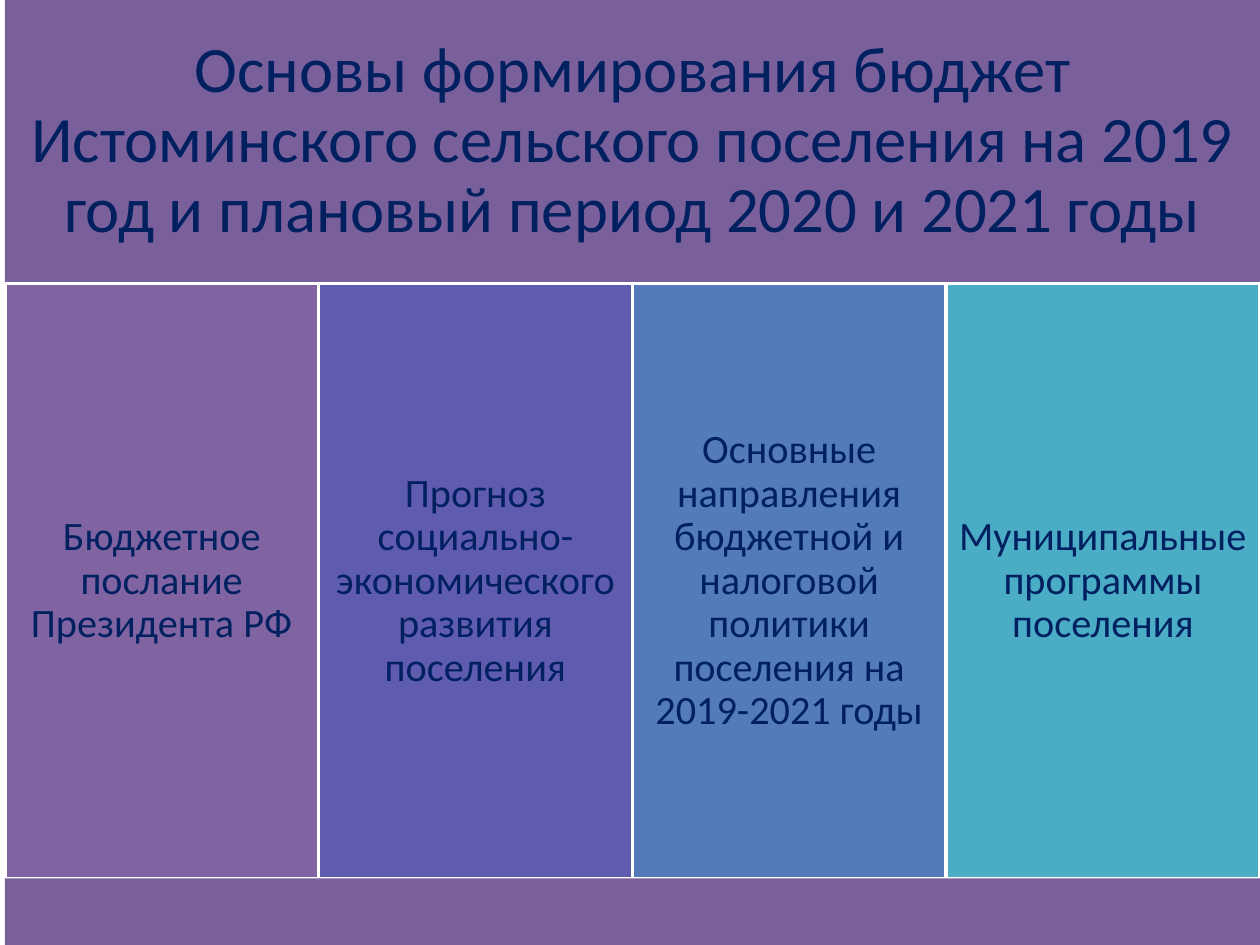
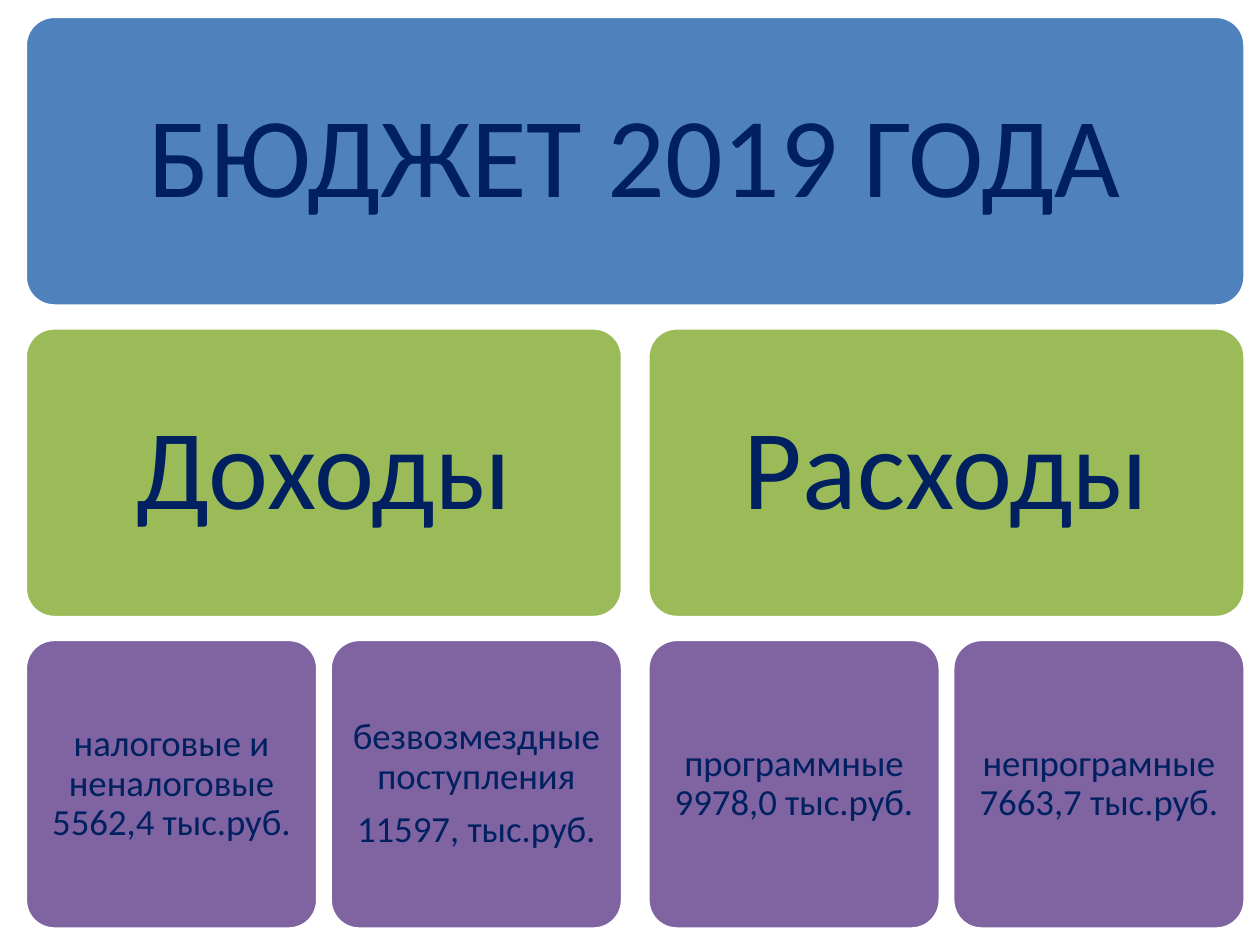
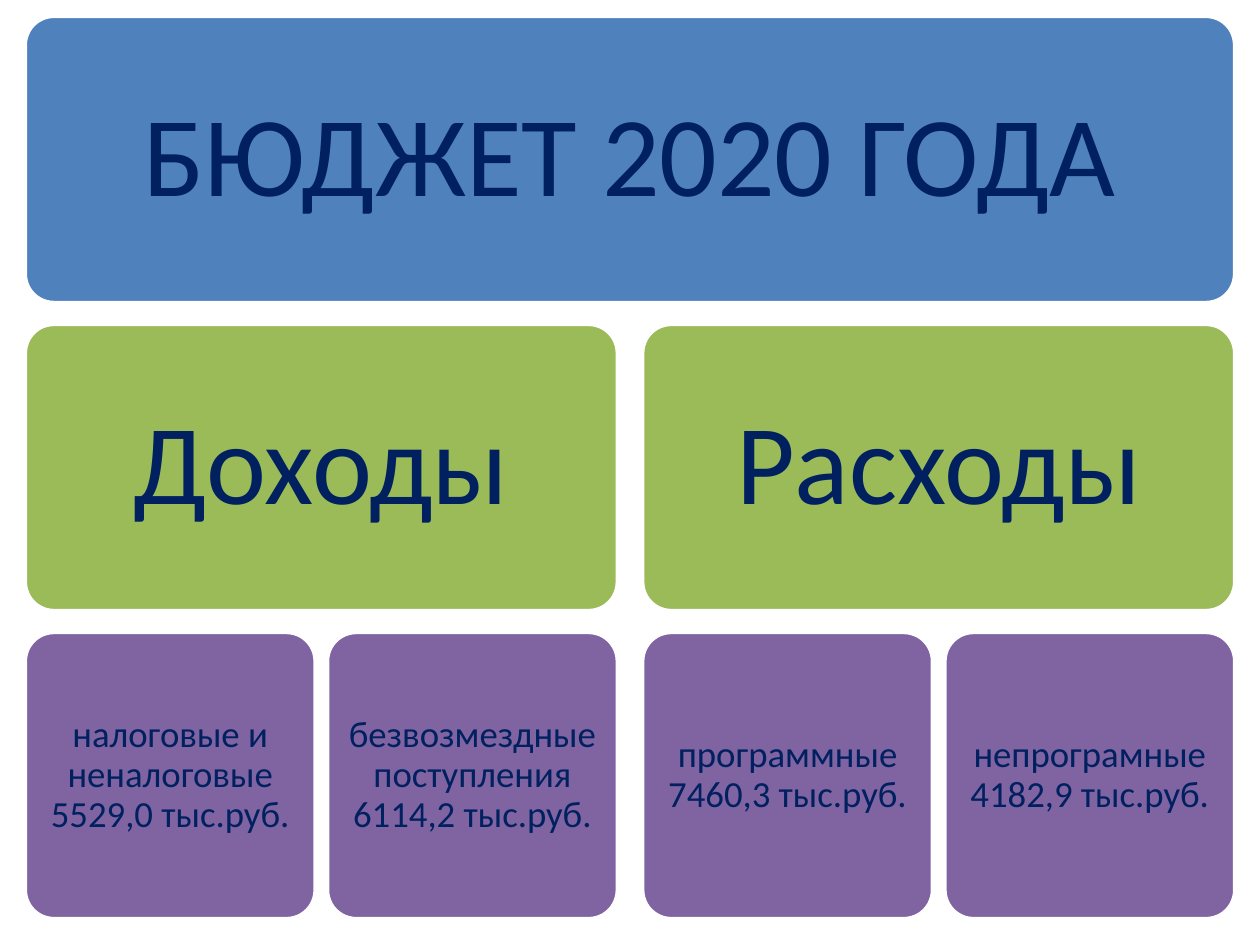
from pptx import Presentation
from pptx.dml.color import RGBColor as Rgb
from pptx.enum.shapes import MSO_SHAPE as Kind
from pptx.enum.text import MSO_ANCHOR as Anchor, PP_ALIGN as Align
from pptx.util import Cm, Pt

FONT = "Calibri"
COLORS = {
    "ink": "002060", "white": "FFFFFF", "band": "7A609B",
    "plum": "8064A2", "indigo": "5F5BAE", "steel": "537ABA",
    "teal": "4BACC6", "blue": "4F81BD", "green": "9BBB59",
}
WIDE, HIGH = 25.4, 19.05
EDGE, HEAD, BODY = 0.1, 5.72, 11.99
LEFT, TOP = 0.51, 0.33
ROW_GAP, HALF_GAP, LEAF_GAP = 0.44, 0.51, 0.25

BASES = [
    ("plum", "Бюджетное послание Президента РФ"),
    ("indigo", "Прогноз социально-экономического развития поселения"),
    ("steel", "Основные направления бюджетной и налоговой политики "
              "поселения на 2019-2021 годы"),
    ("teal", "Муниципальные программы поселения"),
]


def color(name):
    """Return the named colour."""
    return Rgb.from_string(COLORS[name])


def write(shape, lines, size, inset):
    """Fill a shape with centred paragraphs."""
    frame = shape.text_frame
    frame.word_wrap = True
    frame.vertical_anchor = Anchor.MIDDLE
    frame.margin_left = frame.margin_right = Cm(inset)
    frame.margin_top = frame.margin_bottom = Cm(inset)
    for i, line in enumerate(lines):
        para = frame.add_paragraph() if i else frame.paragraphs[0]
        para.alignment = Align.CENTER
        para.line_spacing = 0.9
        para.space_after = Pt(size * 0.35)
        run = para.add_run()
        run.text = line
        run.font.name = FONT
        run.font.size = Pt(size)
        run.font.color.rgb = color("ink")


def block(slide, kind, box, fill, edged=True):
    """Add a flat shape, with a white edge if asked."""
    shape = slide.shapes.add_shape(kind, *map(Cm, box))
    shape.shadow.inherit = False
    shape.fill.solid()
    shape.fill.fore_color.rgb = color(fill)
    if edged:
        shape.line.color.rgb = color("white")
        shape.line.width = Pt(2)
    else:
        shape.line.fill.background()
    return shape


def band(slide, top, high):
    """Add a full-width band."""
    box = EDGE, top, WIDE - EDGE, high
    return block(slide, Kind.RECTANGLE, box, "band", edged=False)


def card(slide, box, fill, lines, size, inset):
    """Add a rounded card with text."""
    shape = block(slide, Kind.ROUNDED_RECTANGLE, box, fill)
    shape.adjustments[0] = 0.1
    write(shape, lines, size, inset)


def pillars(slide, title, items):
    """Draw a titled row of equal columns between two bands."""
    write(band(slide, 0, HEAD), [title], 37, 0.37)
    step = (WIDE - EDGE) / len(items)
    for i, (fill, text) in enumerate(items):
        box = EDGE + i * step, HEAD, step, BODY
        write(block(slide, Kind.RECTANGLE, box, fill), [text], 23, 0.26)
    band(slide, HEAD + BODY, HIGH - HEAD - BODY)


def tree(slide, title, parts, wide, high):
    """Draw a budget card above its halves and their leaves."""
    rows = [TOP + i * (high + ROW_GAP) for i in range(3)]
    half = (wide - HALF_GAP) / 2
    leaf = (half - LEAF_GAP) / 2
    card(slide, (LEFT, rows[0], wide, high), "blue", [title], 65, 0.69)
    for i, (name, leaves) in enumerate(parts.items()):
        left = LEFT + i * (half + HALF_GAP)
        card(slide, (left, rows[1], half, high), "green", [name], 65, 0.69)
        for j, lines in enumerate(leaves):
            box = left + j * (leaf + LEAF_GAP), rows[2], leaf, high
            card(slide, box, "plum", lines, 21, 0.23)


def budget(tax, grants, plan, other):
    """Group the sums of one year into income and spending."""
    return {
        "Доходы": [[f"налоговые и неналоговые {tax} тыс.руб."], grants],
        "Расходы": [[f"программные {plan} тыс.руб."],
                    [f"непрограмные {other} тыс.руб."]],
    }


def main():
    """Build the three slides."""
    deck = Presentation()
    deck.slide_width, deck.slide_height = Cm(WIDE), Cm(HIGH)
    first, second, third = (
        deck.slides.add_slide(deck.slide_layouts[6]) for _ in range(3))
    pillars(first, "Основы формирования бюджет Истоминского сельского "
                   "поселения на 2019 год и плановый период 2020 и 2021 годы",
            BASES)
    tree(second, "БЮДЖЕТ 2019 ГОДА",
         budget("5562,4", ["безвозмездные поступления", "11597, тыс.руб."],
                "9978,0", "7663,7"), 24.59, 5.84)
    tree(third, "БЮДЖЕТ 2020 ГОДА",
         budget("5529,0", ["безвозмездные поступления 6114,2 тыс.руб."],
                "7460,3", "4182,9"), 24.38, 5.77)
    deck.save("out.pptx")


if __name__ == "__main__":
    main()
